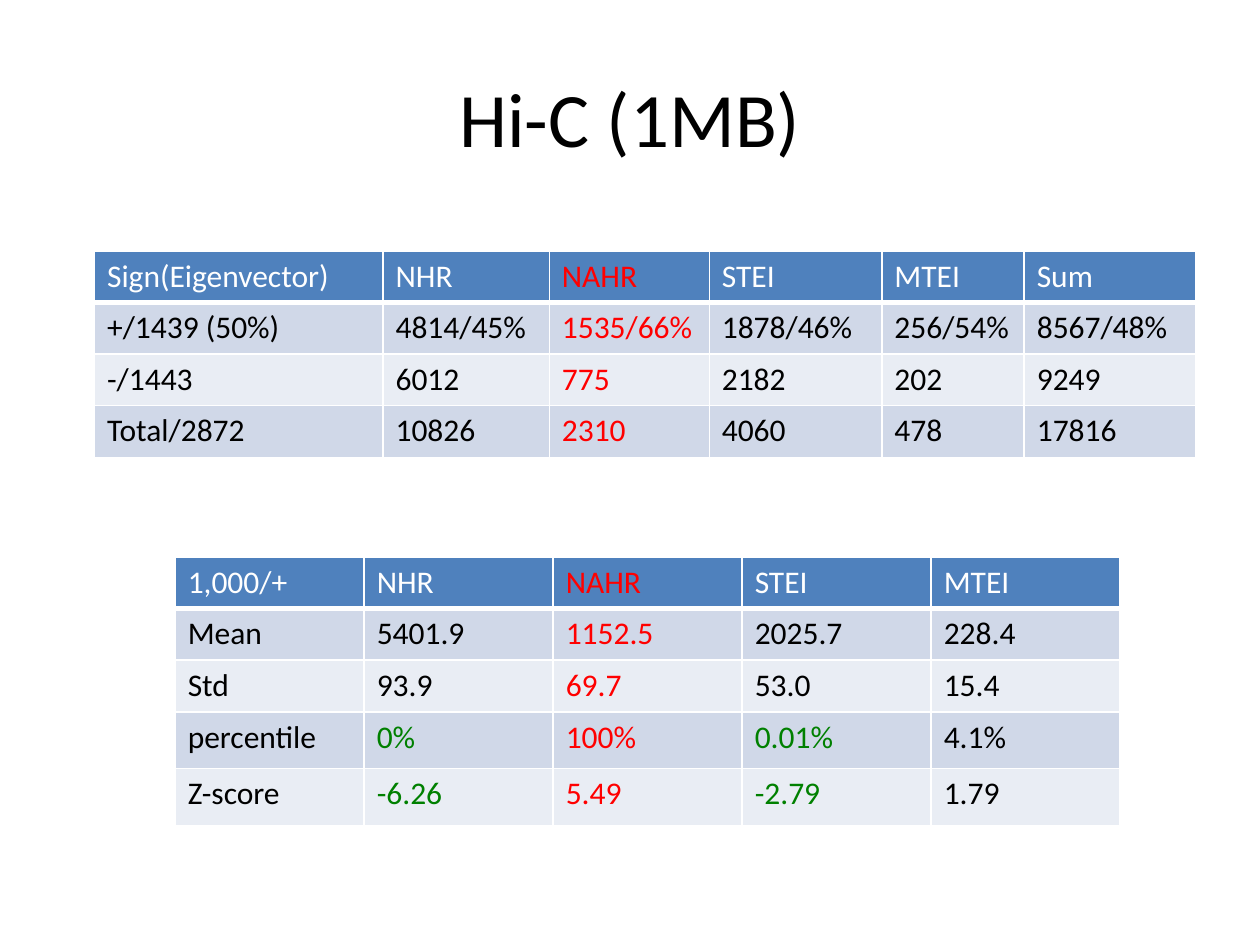
from dataclasses import dataclass

from lxml import etree
from pptx import Presentation
from pptx.dml.color import RGBColor
from pptx.enum import text
from pptx.oxml import ns
from pptx.util import Inches, Pt

WHITE = RGBColor(0xFF, 0xFF, 0xFF)
BLACK = RGBColor(0, 0, 0)
RED = RGBColor(0xFF, 0, 0)
GREEN = RGBColor(0, 0x80, 0)
BLUE = RGBColor(0x4F, 0x81, 0xBD)
BANDS = RGBColor(0xE9, 0xED, 0xF4), RGBColor(0xD0, 0xD8, 0xE8)
FONT = "Calibri"
RED_COL = 2


@dataclass(frozen=True)
class Grid:
    left: float
    top: float
    cols: list[float]
    rows: list[float]
    data: list[list[str]]
    greens: frozenset[tuple[int, int]] = frozenset()


COUNTS = Grid(
    0.75, 1.99, [2.29, 1.32, 1.27, 1.37, 1.13, 1.36], [0.41] * 4,
    [
        ["Sign(Eigenvector)", "NHR", "NAHR", "STEI", "MTEI", "Sum"],
        ["+/1439 (50%)", "4814/45%", "1535/66%", "1878/46%", "256/54%", "8567/48%"],
        ["-/1443", "6012", "775", "2182", "202", "9249"],
        ["Total/2872", "10826", "2310", "4060", "478", "17816"],
    ],
)
SCORES = Grid(
    1.39, 4.42, [1.5] * 5, [0.41] * 3 + [0.45] * 2,
    [
        ["1,000/+", "NHR", "NAHR", "STEI", "MTEI"],
        ["Mean", "5401.9", "1152.5", "2025.7", "228.4"],
        ["Std", "93.9", "69.7", "53.0", "15.4"],
        ["percentile", "0%", "100%", "0.01%", "4.1%"],
        ["Z-score", "-6.26", "5.49", "-2.79", "1.79"],
    ],
    frozenset({(3, 1), (3, 3), (4, 1), (4, 3)}),
)


def ink(grid: Grid, row: int, col: int) -> RGBColor:
    if col == RED_COL:
        return RED
    if (row, col) in grid.greens:
        return GREEN
    return BLACK if row else WHITE


def add_edges(cell, head: bool) -> None:
    props = cell._tc.get_or_add_tcPr()
    for side in "LRTB":
        width = Pt(3 if head and side == "B" else 1)
        line = etree.SubElement(props, ns.qn(f"a:ln{side}"), w=str(width))
        fill = etree.SubElement(line, ns.qn("a:solidFill"))
        etree.SubElement(fill, ns.qn("a:srgbClr"), val=str(WHITE))


def set_font(par, size: int, color: RGBColor) -> None:
    par.font.name = FONT
    par.font.size = Pt(size)
    par.font.bold = False
    par.font.color.rgb = color


def add_grid(slide, grid: Grid) -> None:
    table = slide.shapes.add_table(
        len(grid.rows), len(grid.cols), Inches(grid.left), Inches(grid.top),
        Inches(sum(grid.cols)), Inches(sum(grid.rows)),
    ).table
    for col, width in zip(table.columns, grid.cols):
        col.width = Inches(width)
    for row, height in zip(table.rows, grid.rows):
        row.height = Inches(height)
    for r, line in enumerate(grid.data):
        for c, value in enumerate(line):
            cell = table.cell(r, c)
            cell.text = value
            add_edges(cell, r == 0)
            cell.fill.solid()
            cell.fill.fore_color.rgb = BANDS[r % 2] if r else BLUE
            set_font(cell.text_frame.paragraphs[0], 18, ink(grid, r, c))


def main() -> None:
    deck = Presentation()
    deck.slide_width, deck.slide_height = Inches(10), Inches(7.5)
    slide = deck.slides.add_slide(deck.slide_layouts[5])
    title = slide.shapes.title
    title.left, title.top = Inches(0.5), Inches(0.3)
    title.width, title.height = Inches(9), Inches(1.25)
    title.text = "Hi-C (1MB)"
    title.text_frame.vertical_anchor = text.MSO_ANCHOR.MIDDLE
    par = title.text_frame.paragraphs[0]
    par.alignment = text.PP_ALIGN.CENTER
    set_font(par, 44, BLACK)
    for grid in (COUNTS, SCORES):
        add_grid(slide, grid)
    deck.save("out.pptx")


if __name__ == "__main__":
    main()
